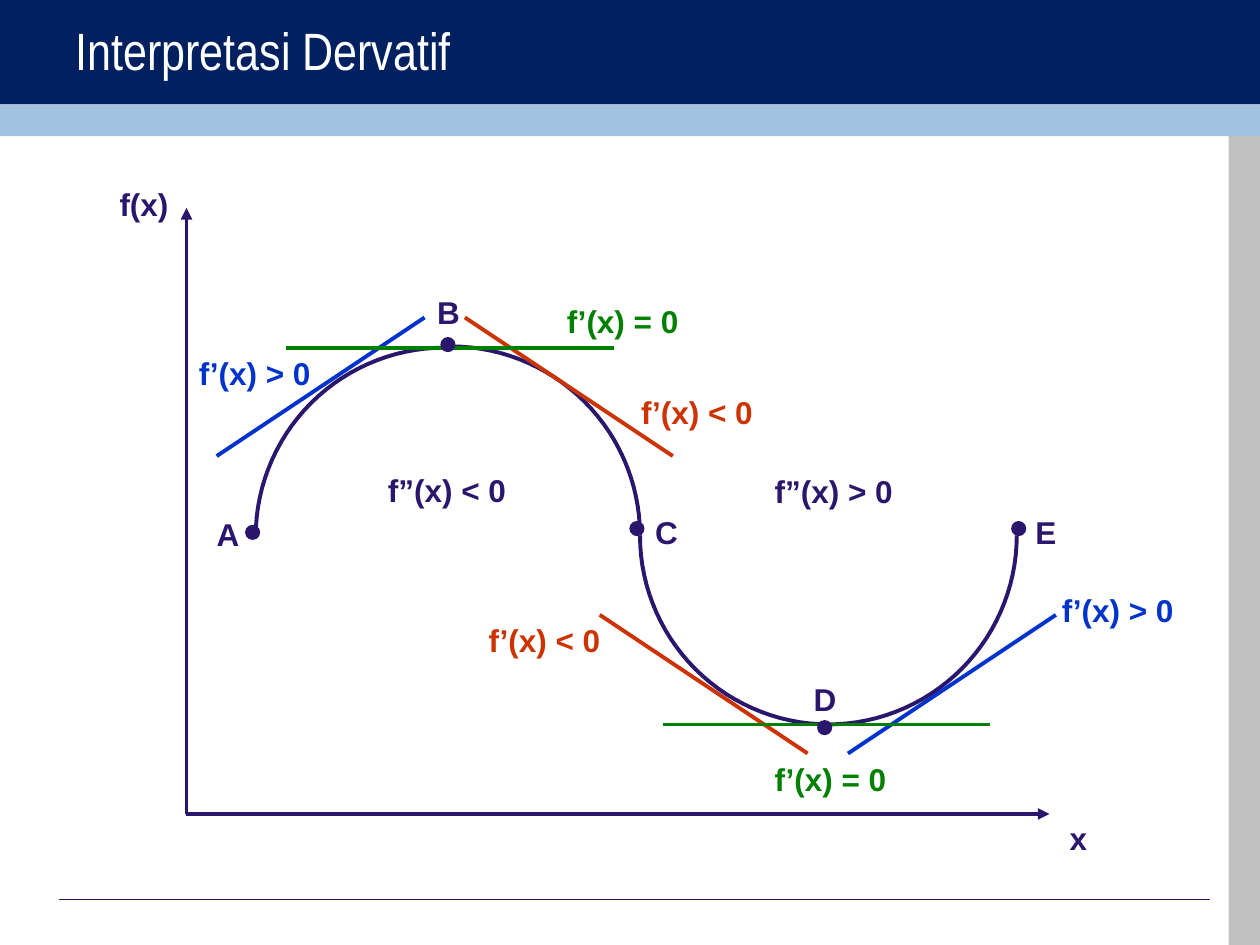
from math import cos, radians, sin

from lxml.etree import SubElement
from pptx import Presentation
from pptx.dml.color import RGBColor
from pptx.enum.shapes import MSO_CONNECTOR, MSO_SHAPE
from pptx.enum.text import MSO_ANCHOR, MSO_AUTO_SIZE, PP_ALIGN
from pptx.oxml.ns import qn
from pptx.util import Inches, Pt

COLORS = {
    "ink": "2B166E", "rising": "0033CC", "falling": "CC3300", "flat": "008000",
    "navy": "002060", "sky": "A3C2E0", "gray": "C0C0C0", "white": "FFFFFF",
}
TITLE = "Interpretasi Dervatif"

# left, top, width, height, color
BANDS = [
    (9.75, 1.07, 0.25, 6.43, "gray"),
    (0, 0, 10, 0.83, "navy"),
    (0, 0.83, 10, 0.25, "sky"),
]
FOOTER_RULE = (0.47, 7.14, 9.6, 7.14)

ORIGIN = (1.48, 6.46)
AXIS_ENDS = [(1.48, 1.65), (8.33, 6.46)]

# Quarter circles: center x, center y, start angle (clockwise from the right)
RADIUS = 1.5
QUARTERS = [(3.53, 4.26, 180), (3.58, 4.25, 270), (6.58, 4.25, 90), (6.57, 4.25, 0)]

# Tangents: x1, y1, x2, y2, color
TANGENTS = [
    (3.69, 2.52, 5.34, 3.62, "falling"),
    (3.37, 2.52, 1.72, 3.62, "rising"),
    (2.27, 2.76, 4.87, 2.76, "flat"),
    (8.38, 4.88, 6.73, 5.98, "rising"),
    (4.76, 4.88, 6.41, 5.98, "falling"),
    (5.26, 5.75, 7.86, 5.75, "flat"),
]

# Points on the curve: left, top
DOT_SIZE = 0.11
DOTS = [(1.95, 4.17), (3.5, 2.68), (5, 4.14), (6.49, 5.72), (8.03, 4.14)]

# Labels: text, left, top, width, color
SLOPE_WIDTH = 1.1
LABELS = [
    ("f(x)", 0.85, 1.42, 0.59, "ink"),
    ("x", 8.39, 6.45, 0.34, "ink"),
    ("f”(x) < 0", 2.98, 3.69, 1.15, "ink"),
    ("f”(x) > 0", 6.05, 3.7, 1.15, "ink"),
    ("f’(x) > 0", 1.48, 2.76, SLOPE_WIDTH, "rising"),
    ("f’(x) = 0", 4.4, 2.35, SLOPE_WIDTH, "flat"),
    ("f’(x) < 0", 4.99, 3.07, SLOPE_WIDTH, "falling"),
    ("f’(x) < 0", 3.78, 4.88, SLOPE_WIDTH, "falling"),
    ("f’(x) = 0", 6.05, 5.98, SLOPE_WIDTH, "flat"),
    ("f’(x) > 0", 8.33, 4.64, SLOPE_WIDTH, "rising"),
    ("A", 1.62, 4.04, 0.38, "ink"),
    ("B", 3.37, 2.28, 0.38, "ink"),
    ("C", 5.1, 4.02, 0.38, "ink"),
    ("D", 6.36, 5.35, 0.38, "ink"),
    ("E", 8.12, 4.02, 0.37, "ink"),
]


def rgb(name):
    return RGBColor.from_string(COLORS[name])


def style_font(paragraph, name, size, color, bold=False):
    font = paragraph.runs[0].font
    font.name, font.size, font.bold = name, Pt(size), bold
    font.color.rgb = rgb(color)


def add_filled(slide, kind, left, top, width, height, color, line_width=None):
    shape = slide.shapes.add_shape(
        kind, Inches(left), Inches(top), Inches(width), Inches(height))
    shape.shadow.inherit = False
    shape.fill.solid()
    shape.fill.fore_color.rgb = rgb(color)
    if line_width is None:
        shape.line.fill.background()
    else:
        shape.line.color.rgb = rgb(color)
        shape.line.width = Pt(line_width)


def add_line(slide, x1, y1, x2, y2, color, width=2.25, arrow=False):
    connector = slide.shapes.add_connector(
        MSO_CONNECTOR.STRAIGHT, Inches(x1), Inches(y1), Inches(x2), Inches(y2))
    connector.line.color.rgb = rgb(color)
    connector.line.width = Pt(width)
    if arrow:
        SubElement(connector.line._get_or_add_ln(), qn("a:tailEnd"), type="triangle")
    SubElement(connector._element.spPr, qn("a:effectLst"))


def add_quarter(slide, center_x, center_y, start, steps=30):
    angles = [radians(start + 90 * step / steps) for step in range(steps + 1)]
    points = [(Inches(center_x + RADIUS * cos(angle)),
               Inches(center_y + RADIUS * sin(angle))) for angle in angles]
    builder = slide.shapes.build_freeform(*points[0])
    builder.add_line_segments(points[1:], close=False)
    shape = builder.convert_to_shape()
    shape.shadow.inherit = False
    shape.fill.background()
    shape.line.color.rgb = rgb("ink")
    shape.line.width = Pt(2.25)


def add_label(slide, text, left, top, width, color):
    box = slide.shapes.add_textbox(
        Inches(left), Inches(top), Inches(width), Inches(0.4))
    text_frame = box.text_frame
    text_frame.word_wrap = False
    text_frame.auto_size = MSO_AUTO_SIZE.SHAPE_TO_FIT_TEXT
    text_frame.text = text
    style_font(text_frame.paragraphs[0], "Arial", 18, color, bold=True)


def place_title(slide):
    title = slide.shapes.title
    title.left, title.top = Inches(0.5), Inches(0.08)
    title.width, title.height = Inches(6.75), Inches(0.62)
    text_frame = title.text_frame
    text_frame.text = TITLE
    text_frame.vertical_anchor = MSO_ANCHOR.MIDDLE
    text_frame.auto_size = MSO_AUTO_SIZE.NONE
    paragraph = text_frame.paragraphs[0]
    paragraph.alignment = PP_ALIGN.LEFT
    style_font(paragraph, "Arial Narrow", 30, "white")
    # Bring the title in front of the header band
    title._element.getparent().append(title._element)


def main():
    presentation = Presentation()
    presentation.slide_width, presentation.slide_height = Inches(10), Inches(7.5)
    slide = presentation.slides.add_slide(presentation.slide_layouts[5])

    # Frame and title
    for *box, color in BANDS:
        add_filled(slide, MSO_SHAPE.RECTANGLE, *box, color)
    add_line(slide, *FOOTER_RULE, "ink", width=0.75)
    place_title(slide)

    # Curve, axes and tangents
    for quarter in QUARTERS:
        add_quarter(slide, *quarter)
    for end in AXIS_ENDS:
        add_line(slide, *ORIGIN, *end, "ink", arrow=True)
    for tangent in TANGENTS:
        add_line(slide, *tangent)

    # Points and labels
    for left, top in DOTS:
        add_filled(slide, MSO_SHAPE.OVAL, left, top, DOT_SIZE, DOT_SIZE, "ink", 0.75)
    for label in LABELS:
        add_label(slide, *label)

    presentation.save("out.pptx")


if __name__ == "__main__":
    main()
